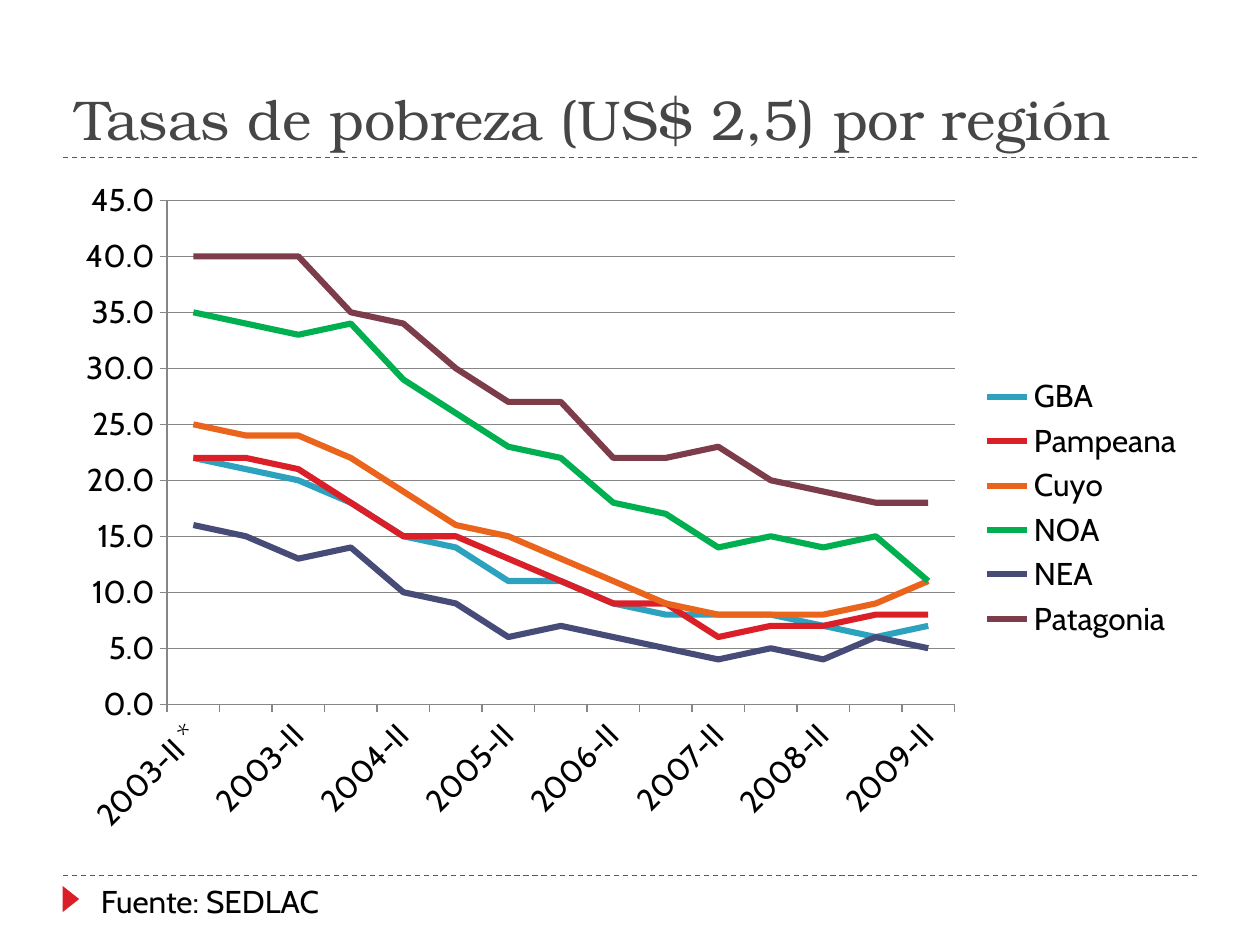
from dataclasses import dataclass

from lxml.etree import SubElement
from pptx import Presentation
from pptx.chart.data import CategoryChartData
from pptx.dml.color import RGBColor
from pptx.enum.chart import XL_CHART_TYPE as ChartType, XL_LEGEND_POSITION as LegendPosition
from pptx.enum.chart import XL_TICK_MARK as TickMark
from pptx.enum.dml import MSO_LINE_DASH_STYLE as Dash
from pptx.enum.shapes import MSO_CONNECTOR_TYPE as Connector, MSO_SHAPE as Shape
from pptx.enum.text import MSO_ANCHOR as Anchor, PP_ALIGN as Align
from pptx.oxml.ns import qn
from pptx.util import Pt


@dataclass(frozen=True)
class Theme:
    title_font: str = "TeX Gyre Bonum"
    body_font: str = "Cabin"
    title_size: int = 32
    body_size: int = 18
    accent: str = "DA1F28"
    title: str = "464646"
    text: str = "000000"
    grid: str = "868686"


THEME = Theme()
LEFT, WIDTH = 36, 648
CHART_TOP, CHART_HEIGHT = 95.8, 388.8

CATEGORIES = ["2003-II *", "2003-II **", "2003-II"] + [
    f"{year}-{half}" for year in range(2004, 2010) for half in ("I", "II")
]
REGIONS = [
    ("GBA", "2DA2BF", [22, 21, 20, 18, 15, 14, 11, 11, 9, 8, 8, 8, 7, 6, 7]),
    ("Pampeana", "DA1F28", [22, 22, 21, 18, 15, 15, 13, 11, 9, 9, 6, 7, 7, 8, 8]),
    ("Cuyo", "EB641B", [25, 24, 24, 22, 19, 16, 15, 13, 11, 9, 8, 8, 8, 9, 11]),
    ("NOA", "00B050", [35, 34, 33, 34, 29, 26, 23, 22, 18, 17, 14, 15, 14, 15, 11]),
    ("NEA", "474B78", [16, 15, 13, 14, 10, 9, 6, 7, 6, 5, 4, 5, 4, 6, 5]),
    ("Patagonia", "7D3C4A", [40, 40, 40, 35, 34, 30, 27, 27, 22, 22, 23, 20, 19, 18, 18]),
]


def color(value):
    return RGBColor.from_string(value)


def style_font(font, name, size, value):
    font.name, font.size = name, Pt(size)
    font.color.rgb = color(value)


def style_line(line, value, width):
    line.color.rgb = color(value)
    line.width = Pt(width)


def add_rule(slide, top):
    """Add a dashed line across the content width."""
    rule = slide.shapes.add_connector(
        Connector.STRAIGHT, Pt(LEFT), Pt(top), Pt(LEFT + WIDTH), Pt(top))
    style_line(rule.line, THEME.accent, 0.75)
    rule.line.dash_style = Dash.DASH
    SubElement(rule.element.spPr, qn("a:effectLst"))


def add_marker(slide):
    marker = slide.shapes.add_shape(
        Shape.ISOSCELES_TRIANGLE, Pt(33), Pt(509), Pt(15), Pt(9.5))
    marker.rotation = 90
    marker.shadow.inherit = False
    marker.fill.solid()
    marker.fill.fore_color.rgb = color(THEME.accent)
    marker.line.fill.background()


def set_title(slide, text):
    title = slide.shapes.title
    title.left, title.top, title.width, title.height = Pt(LEFT), Pt(12.5), Pt(WIDTH), Pt(78)
    frame = title.text_frame
    frame.text = text
    frame.vertical_anchor = Anchor.BOTTOM
    paragraph = frame.paragraphs[0]
    paragraph.alignment = Align.LEFT
    style_font(paragraph.runs[0].font, THEME.title_font, THEME.title_size, THEME.title)


def add_source(slide, text):
    box = slide.shapes.add_textbox(Pt(50.5), Pt(500.5), Pt(270), Pt(29))
    frame = box.text_frame
    frame.word_wrap = True
    frame.text = text
    style_font(frame.paragraphs[0].runs[0].font, THEME.body_font, THEME.body_size, THEME.text)


def set_plot_layout(chart, left, top, width, height):
    """Fix the inner plot area, given in points from the chart's corner."""
    plot_area = chart.element.find(".//" + qn("c:plotArea"))
    layout = plot_area.find(qn("c:layout"))
    if layout is None:
        layout = SubElement(plot_area, qn("c:layout"))
        plot_area.insert(0, layout)
    manual = SubElement(layout, qn("c:manualLayout"))
    settings = {
        "layoutTarget": "inner", "xMode": "edge", "yMode": "edge",
        "x": left / WIDTH, "y": top / CHART_HEIGHT,
        "w": width / WIDTH, "h": height / CHART_HEIGHT,
    }
    for name, value in settings.items():
        SubElement(manual, qn(f"c:{name}")).set("val", str(value))


def style_axes(chart):
    for axis in (chart.category_axis, chart.value_axis):
        style_line(axis.format.line, THEME.grid, 0.75)
        axis.major_tick_mark = TickMark.OUTSIDE
        axis.minor_tick_mark = TickMark.NONE
    values = chart.value_axis
    values.minimum_scale, values.maximum_scale, values.major_unit = 0, 45, 5
    values.has_major_gridlines = True
    style_line(values.major_gridlines.format.line, THEME.grid, 0.75)
    values.tick_labels.number_format = "0.0"
    values.tick_labels.number_format_is_linked = False

    labels = chart.category_axis.tick_labels
    style_font(labels.font, THEME.body_font, THEME.body_size, THEME.text)
    element = chart.element.find(".//" + qn("c:catAx"))
    element.find(qn("c:txPr")).find(qn("a:bodyPr")).set("rot", "-2700000")
    label_skip = SubElement(element, qn("c:tickLblSkip"))
    label_skip.set("val", "2")
    element.find(qn("c:noMultiLvlLbl")).addprevious(label_skip)


def add_poverty_chart(slide):
    data = CategoryChartData(number_format="0.0")
    data.categories = CATEGORIES
    for name, _, values in REGIONS:
        data.add_series(name, values)
    chart = slide.shapes.add_chart(
        ChartType.LINE, Pt(LEFT), Pt(CHART_TOP), Pt(WIDTH), Pt(CHART_HEIGHT), data).chart
    style_font(chart.font, THEME.body_font, THEME.body_size, THEME.text)
    chart.has_title = False
    chart.has_legend = True
    chart.legend.position = LegendPosition.RIGHT
    chart.legend.include_in_layout = False
    plot = chart.plots[0]
    plot.vary_by_categories = False
    for series, (_, value, _) in zip(plot.series, REGIONS):
        series.smooth = False
        style_line(series.format.line, value, 3.5)
    style_axes(chart)
    set_plot_layout(chart, left=59.5, top=18.7, width=450, height=288)


def main():
    presentation = Presentation()
    presentation.slide_width, presentation.slide_height = Pt(720), Pt(540)
    slide = presentation.slides.add_slide(presentation.slide_layouts[5])
    for top in (500.4, 90):
        add_rule(slide, top)
    add_marker(slide)
    set_title(slide, "Tasas de pobreza (US$ 2,5) por región")
    add_poverty_chart(slide)
    add_source(slide, "Fuente: SEDLAC")
    presentation.save("out.pptx")


if __name__ == "__main__":
    main()
